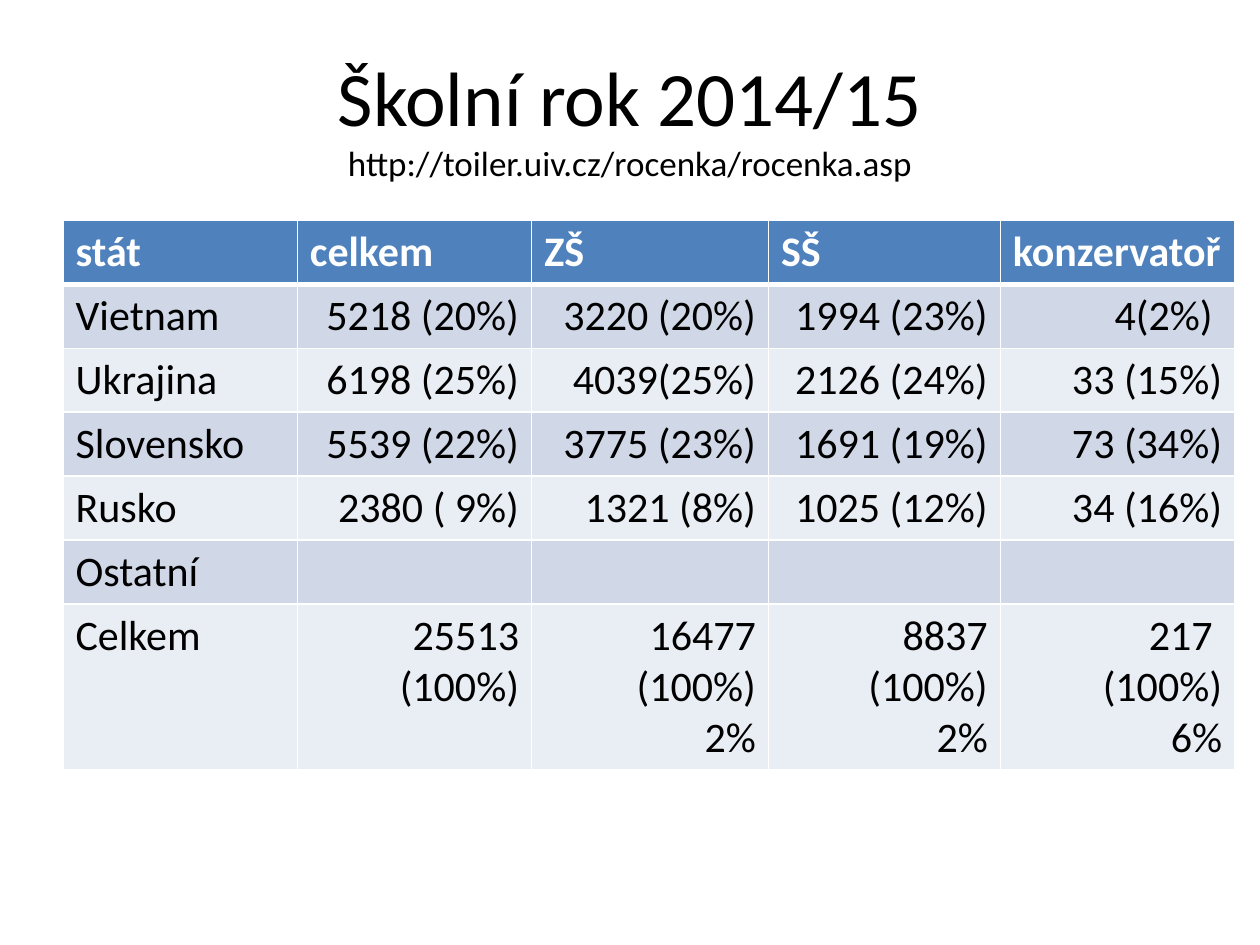
from lxml import etree
from pptx import Presentation
from pptx.dml.color import RGBColor
from pptx.enum import text
from pptx.oxml import ns
from pptx.util import Inches, Pt

FONT = "Calibri"
BLACK = RGBColor(0x00, 0x00, 0x00)
WHITE = RGBColor(0xFF, 0xFF, 0xFF)
HEADER_BLUE = RGBColor(0x4F, 0x81, 0xBD)
BAND_DARK = RGBColor(0xD0, 0xD8, 0xE8)
BAND_LIGHT = RGBColor(0xE9, 0xED, 0xF4)

COLUMN_WIDTHS = [1.86, 1.86, 1.88, 1.84, 1.86]
ROW_HEIGHT = 0.41
ROWS = [
    ["stát", "celkem", "ZŠ", "SŠ", "konzervatoř"],
    ["Vietnam", "5218 (20%)", "3220 (20%)", "1994 (23%)", "4(2%) "],
    ["Ukrajina", "6198 (25%)", "4039(25%)", "2126 (24%)", "33 (15%)"],
    ["Slovensko", "5539 (22%)", "3775 (23%)", "1691 (19%)", "73 (34%)"],
    ["Rusko", "2380 ( 9%)", "1321 (8%)", "1025 (12%)", "34 (16%)"],
    ["Ostatní", "", "", "", ""],
    ["Celkem", "25513 (100%)", "16477 (100%)\n2%", "8837 (100%)\n2%",
     "217 \n(100%)\n6%"],
]


def set_font(font, size, color, bold=False):
    font.name = FONT
    font.size = Pt(size)
    font.color.rgb = color
    font.bold = bold


def add_title(slide, left, top, width, height):
    title = slide.shapes.title
    title.left, title.top = Inches(left), Inches(top)
    title.width, title.height = Inches(width), Inches(height)
    frame = title.text_frame
    frame.vertical_anchor = text.MSO_ANCHOR.MIDDLE
    paragraph = frame.paragraphs[0]
    paragraph.alignment = text.PP_ALIGN.CENTER

    # Heading and, after a line break, its smaller source address
    heading = paragraph.add_run()
    heading.text = "Školní rok 2014/15"
    set_font(heading.font, 44, BLACK)
    paragraph.add_line_break()
    address = paragraph.add_run()
    address.text = "http://toiler.uiv.cz/rocenka/rocenka.asp"
    set_font(address.font, 20, BLACK)


def set_borders(cell, bottom_width):
    """Draw white cell borders; they must come before the fill."""
    properties = cell._tc.get_or_add_tcPr()
    widths = {"lnL": 1, "lnR": 1, "lnT": 1, "lnB": bottom_width}
    for index, (side, width) in enumerate(widths.items()):
        line = etree.Element(ns.qn(f"a:{side}"), w=str(Pt(width)))
        fill = etree.SubElement(line, ns.qn("a:solidFill"))
        etree.SubElement(fill, ns.qn("a:srgbClr"), val=str(WHITE))
        properties.insert(index, line)


def fill_cell(cell, content, row, column):
    is_header = row == 0
    cell.fill.solid()
    if is_header:
        cell.fill.fore_color.rgb = HEADER_BLUE
    else:
        cell.fill.fore_color.rgb = BAND_DARK if row % 2 else BAND_LIGHT
    # The rule under the header is shared with the first body row
    set_borders(cell, 3 if is_header else 1)

    cell.text_frame.text = content
    for paragraph in cell.text_frame.paragraphs:
        set_font(paragraph.font, 24, WHITE if is_header else BLACK, is_header)
        if not is_header and column > 0:
            paragraph.alignment = text.PP_ALIGN.RIGHT


def add_pupil_table(slide, left, top, width, height):
    table = slide.shapes.add_table(
        len(ROWS), len(COLUMN_WIDTHS),
        Inches(left), Inches(top), Inches(width), Inches(height)).table
    for column, column_width in zip(table.columns, COLUMN_WIDTHS):
        column.width = Inches(column_width)
    for row in table.rows:
        row.height = Inches(ROW_HEIGHT)
    for row, values in enumerate(ROWS):
        for column, content in enumerate(values):
            fill_cell(table.cell(row, column), content, row, column)


def main():
    presentation = Presentation()
    presentation.slide_width = Inches(10)
    presentation.slide_height = Inches(7.5)
    title_only = presentation.slide_layouts[5]
    slide = presentation.slides.add_slide(title_only)
    add_title(slide, 0.5, 0.3, 9, 1.25)
    add_pupil_table(slide, 0.5, 1.75, 9.3, 4.3)
    presentation.save("out.pptx")


if __name__ == "__main__":
    main()
